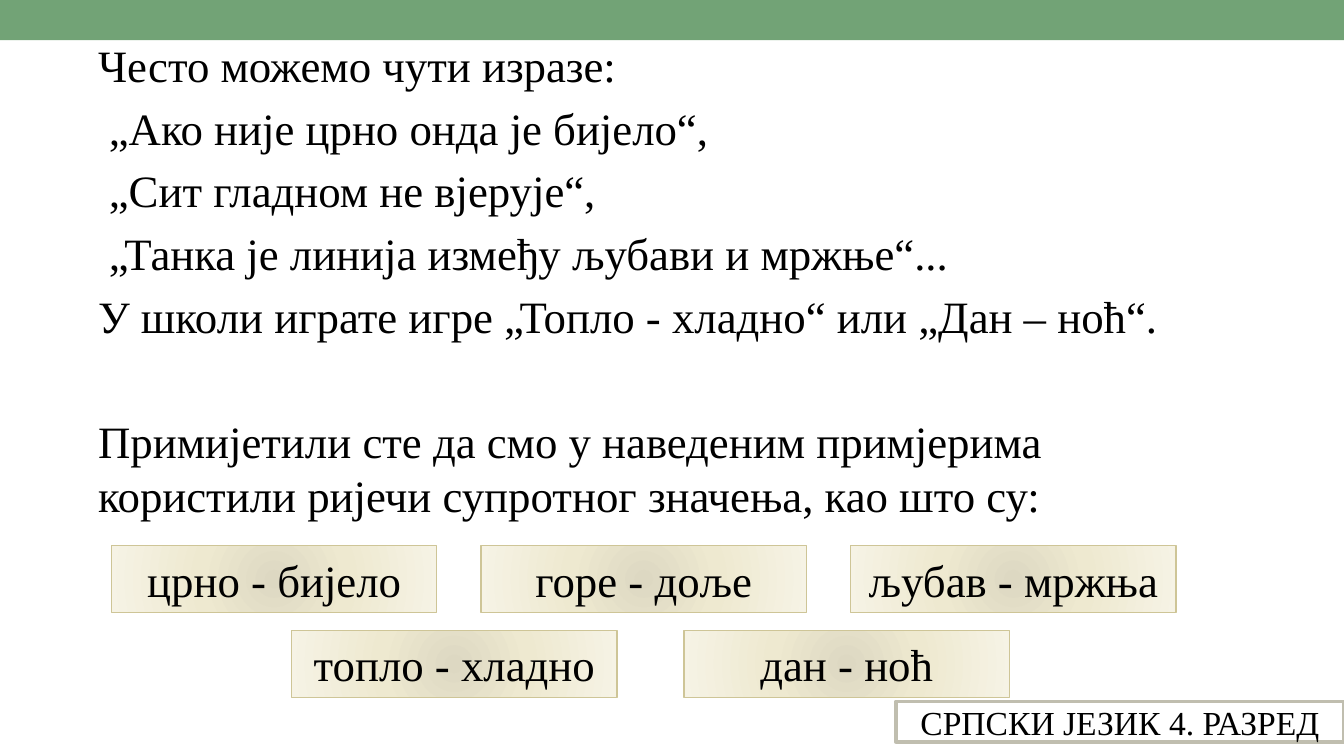
import pptx
import pptx.util
import pptx.dml.color
import pptx.enum.shapes
import pptx.enum.text
import pptx.oxml
import pptx.oxml.ns

Inches, Pt = pptx.util.Inches, pptx.util.Pt
RGB = pptx.dml.color.RGBColor

# Content: text, left margin (in), space before (pt)
GAP = 4.8
LINES = [
    ("Често можемо чути изразе:", 0.05, 0),
    ("„Ако није црно онда је бијело“,", 0.13, GAP),
    ("„Сит гладном не вјерује“,", 0.13, GAP),
    ("„Танка је линија између љубави и мржње“...", 0.13, GAP),
    ("У школи играте игре „Топло - хладно“ или „Дан – ноћ“.", 0.05, GAP),
    ("Примијетили сте да смо у наведеним примјерима "
     "користили ријечи супротног значења, као што су:", 0.05, 8 * GAP),
]
# Rows of word pairs: left, top, step, words
ROWS = [
    (0.83, 4.06, 2.75, ["црно - бијело", "горе - доље", "љубав - мржња"]),
    (2.17, 4.69, 2.92, ["топло - хладно", "дан - ноћ"]),
]
LABEL = "СРПСКИ ЈЕЗИК 4. РАЗРЕД"

# Style
WIDE = 10
HIGH = WIDE * 9 / 16
FONT = "Times New Roman"
BLACK = RGB(0x00, 0x00, 0x00)
WHITE = RGB(0xFF, 0xFF, 0xFF)
GREEN = RGB(0x72, 0xA3, 0x76)
SAND = RGB(0xCE, 0xC5, 0x97)
GREY = RGB(0xC0, 0xBE, 0xAF)
STOPS = [(0, RGB(0xDD, 0xD8, 0xC2)), (45, RGB(0xEE, 0xE9, 0xD0)),
         (100, RGB(0xF6, 0xF3, 0xE5))]


def write(para, text, size):
    run = para.add_run()
    run.text = text
    run.font.name, run.font.size = FONT, Pt(size)
    run.font.color.rgb = BLACK


def add_box(slide, left, top, wide, high, fill, line=None, weight=0):
    box = slide.shapes.add_shape(
        pptx.enum.shapes.MSO_SHAPE.RECTANGLE,
        Inches(left), Inches(top), Inches(wide), Inches(high))
    box.shadow.inherit = False
    box.fill.solid()
    box.fill.fore_color.rgb = fill
    if line is None:
        box.line.fill.background()
    else:
        box.line.color.rgb = line
        box.line.width = Pt(weight)
    return box


def label(box, text, size):
    frame = box.text_frame
    frame.word_wrap = False
    frame.vertical_anchor = pptx.enum.text.MSO_ANCHOR.MIDDLE
    para = frame.paragraphs[0]
    para.alignment = pptx.enum.text.PP_ALIGN.CENTER
    write(para, text, size)


def glow(box):
    """Replace the solid fill with a round gradient."""
    stops = "".join(
        f'<a:gs pos="{pos * 1000}"><a:srgbClr val="{tone}"/></a:gs>'
        for pos, tone in STOPS)
    grad = pptx.oxml.parse_xml(
        f'<a:gradFill {pptx.oxml.ns.nsdecls("a")} rotWithShape="1">'
        f'<a:gsLst>{stops}</a:gsLst><a:path path="circle">'
        '<a:fillToRect l="100000" t="100000" r="100000" b="100000"/>'
        '</a:path></a:gradFill>')
    props = box._element.spPr
    props.replace(props.find(pptx.oxml.ns.qn("a:solidFill")), grad)


def fill_body(body):
    body.left, body.top = Inches(0.58), Inches(0.23)
    body.width, body.height = Inches(8.5), Inches(4.71)
    frame = body.text_frame
    frame.word_wrap = True
    frame.auto_size = pptx.enum.text.MSO_AUTO_SIZE.NONE
    frame.vertical_anchor = pptx.enum.text.MSO_ANCHOR.TOP
    for num, (text, left, gap) in enumerate(LINES):
        para = frame.add_paragraph() if num else frame.paragraphs[0]
        props = para._p.get_or_add_pPr()
        props.set("marL", str(Inches(left)))
        props.set("indent", "0")
        props.append(pptx.oxml.parse_xml(
            f'<a:buNone {pptx.oxml.ns.nsdecls("a")}/>'))
        para.line_spacing = Pt(28.8)
        para.space_before = Pt(gap)
        write(para, text, 24)


def main():
    deck = pptx.Presentation()
    deck.slide_width, deck.slide_height = Inches(WIDE), Inches(HIGH)
    slide = deck.slides.add_slide(deck.slide_layouts[1])
    title = slide.shapes.title._element
    title.getparent().remove(title)

    # Top band and main text
    add_box(slide, 0, 0, WIDE, 0.3, GREEN)
    fill_body(slide.placeholders[1])

    # Word pairs
    for left, top, step, words in ROWS:
        for col, text in enumerate(words):
            box = add_box(slide, left + col * step, top, 2.42, 0.5,
                          WHITE, SAND, 0.75)
            glow(box)
            label(box, text, 24)

    # Corner label
    box = add_box(slide, WIDE * 2 / 3, 5.22, WIDE / 3, 0.3, WHITE, GREY, 2.08)
    label(box, LABEL, 18)

    deck.save("out.pptx")


if __name__ == "__main__":
    main()
